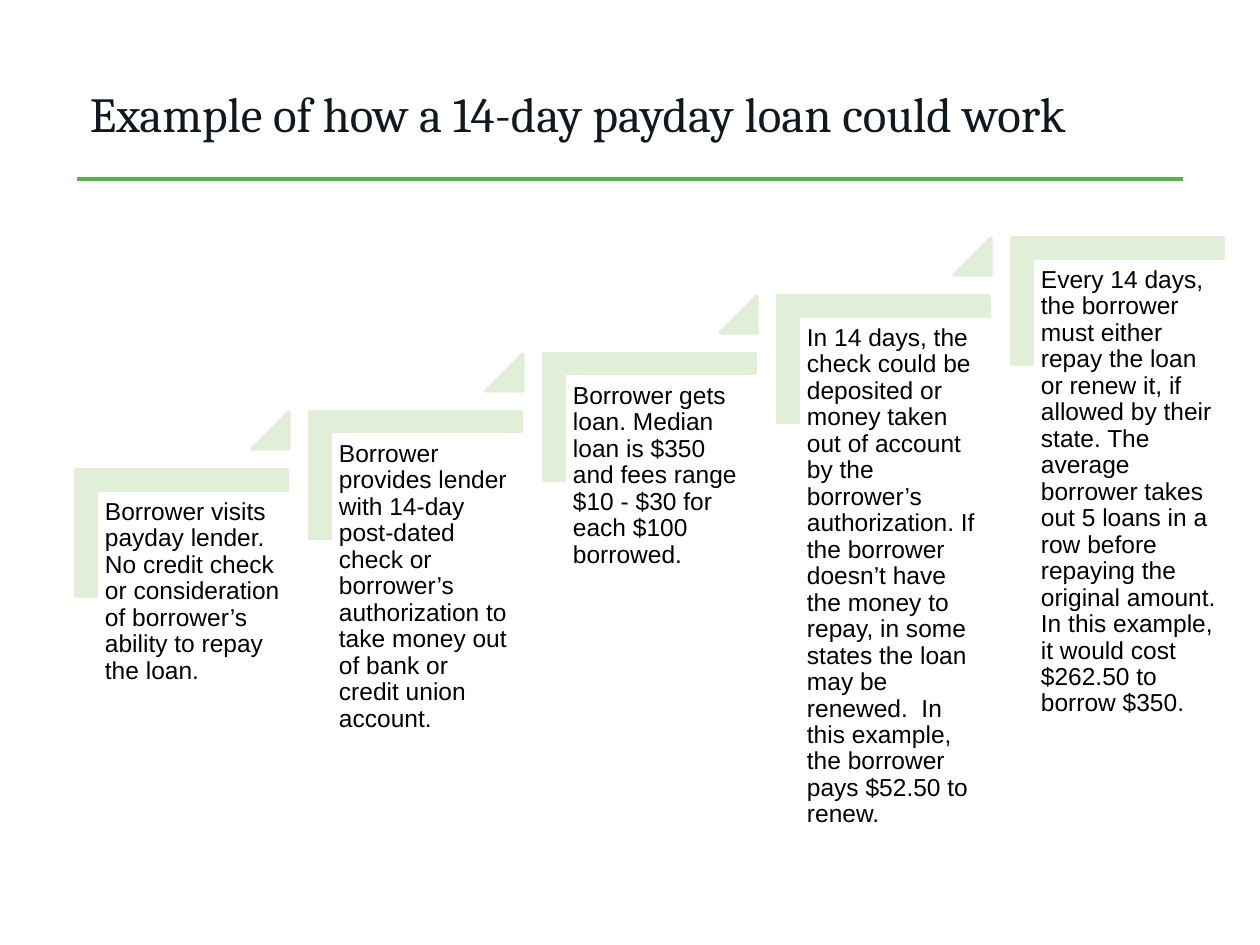
import pptx
import pptx.dml.color
import pptx.enum.shapes
import pptx.enum.text
import pptx.oxml
import pptx.util

PX = 914400 / 126
COLORS = {"title": "101820", "body": "000000", "rule": "50B748", "step": "E2EFD8"}
STEP_ACROSS, STEP_UP = 234, 58
STEPS = [
    "Borrower visits payday lender. No credit check or consideration of "
    "borrower’s ability to repay the loan.",
    "Borrower provides lender with 14-day post-dated check or borrower’s "
    "authorization to take money out of bank or credit union account.",
    "Borrower gets loan. Median loan is $350 and fees range $10 - $30 for "
    "each $100 borrowed.",
    "In 14 days, the check could be deposited or money taken out of account "
    "by the borrower’s authorization. If the borrower doesn’t have the money "
    "to repay, in some states the loan may be renewed.  In this example, the "
    "borrower pays $52.50 to renew.",
    "Every 14 days, the borrower must either repay the loan or renew it, if "
    "allowed by their state. The average borrower takes out 5 loans in a row "
    "before repaying the original amount. In this example, it would cost "
    "$262.50 to borrow $350.",
]


def px(length):
    return pptx.util.Emu(round(length * PX))


def color(name):
    return pptx.dml.color.RGBColor.from_string(COLORS[name])


def add_text(slide, text, left, top, width, height, *, font, size, ink,
             inset, anchor="TOP", spacing=1.0):
    box = slide.shapes.add_textbox(px(left), px(top), px(width), px(height))
    frame = box.text_frame
    frame.word_wrap = True
    frame.vertical_anchor = pptx.enum.text.MSO_ANCHOR[anchor]
    frame.margin_left = frame.margin_right = px(inset[0])
    frame.margin_top = frame.margin_bottom = px(inset[1])
    paragraph = frame.paragraphs[0]
    paragraph.line_spacing = spacing
    run = paragraph.add_run()
    run.text = text
    run.font.name = font
    run.font.size = pptx.util.Pt(size)
    run.font.color.rgb = color(ink)


def add_step_shape(slide, preset, left, top, width, height, adjustments, rotation=0):
    shape = slide.shapes.add_shape(preset, px(left), px(top), px(width), px(height))
    shape.rotation = rotation
    for index, value in enumerate(adjustments):
        shape.adjustments[index] = value
    shape.shadow.inherit = False
    shape.fill.solid()
    shape.fill.fore_color.rgb = color("step")
    shape.line.color.rgb = color("step")
    shape.line.width = pptx.util.Pt(2)


def add_rule(slide, left, right, y):
    rule = slide.shapes.add_connector(
        pptx.enum.shapes.MSO_CONNECTOR.STRAIGHT, px(left), px(y), px(right), px(y))
    rule.line.color.rgb = color("rule")
    rule.line.width = pptx.util.Pt(2)
    properties = rule._element.spPr
    properties.append(properties.makeelement(pptx.oxml.ns.qn("a:effectLst"), {}))


def add_step(slide, index, text):
    across, up = index * STEP_ACROSS, index * STEP_UP
    presets = pptx.enum.shapes.MSO_SHAPE
    add_step_shape(slide, presets.CORNER, 118 + across, 427 - up, 127, 212,
                   [0.16, 0.16], rotation=90)
    add_text(slide, text, 97 + across, 491 - up, 192, 168, font="Arial", size=14,
             ink="body", inset=(8, 8), spacing=0.9)
    if index < len(STEPS) - 1:
        add_step_shape(slide, presets.ISOSCELES_TRIANGLE, 252 + across, 412 - up,
                       37, 37, [1])


def main():
    deck = pptx.Presentation()
    deck.slide_width, deck.slide_height = px(1260), px(945)
    slide = deck.slides.add_slide(deck.slide_layouts[6])
    add_rule(slide, 77, 1183, 179)
    add_text(slide, "Example of how a 14-day payday loan could work", 77, 62, 1107, 102,
             font="Cambria", size=28, ink="title", inset=(13, 6), anchor="MIDDLE")
    for index, text in enumerate(STEPS):
        add_step(slide, index, text)
    deck.save("out.pptx")


if __name__ == "__main__":
    main()
